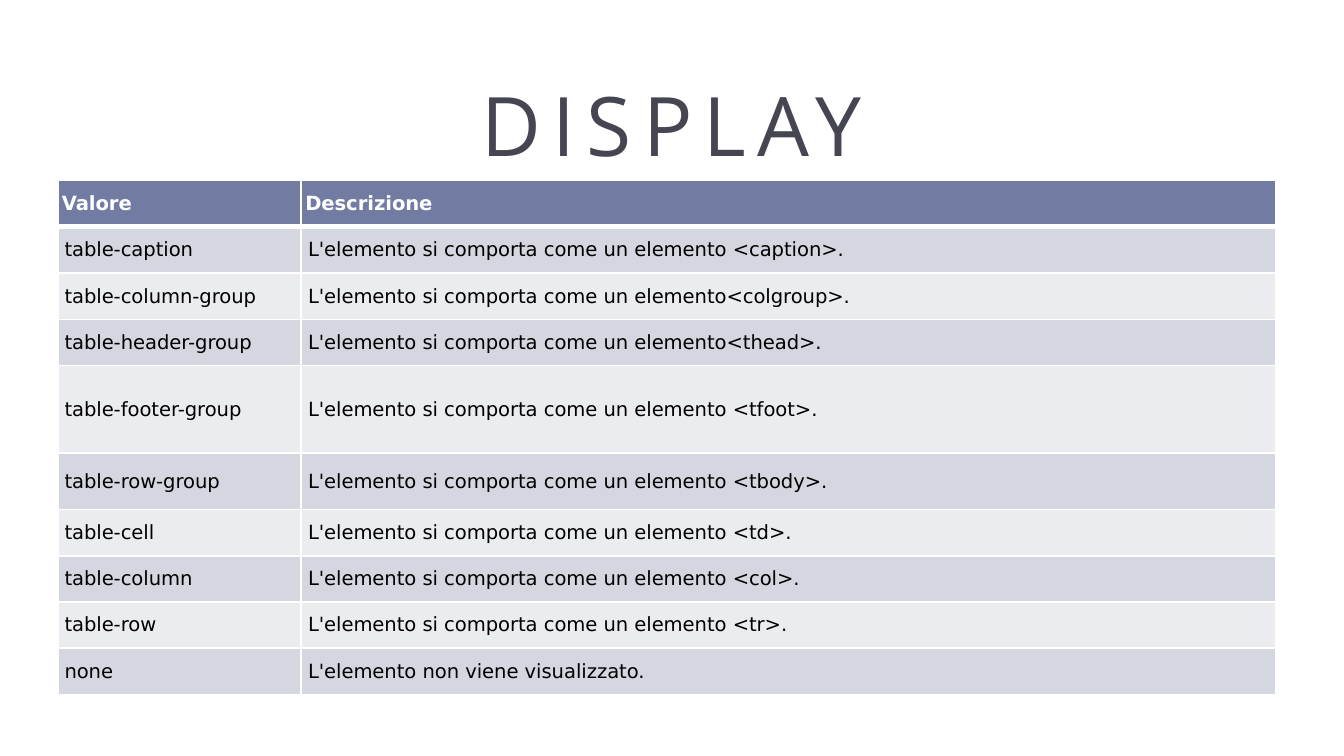
from pptx import Presentation
from pptx.dml.color import RGBColor
from pptx.enum.text import MSO_ANCHOR, PP_ALIGN
from pptx.oxml.ns import qn
from pptx.util import Inches, Pt
from lxml.etree import SubElement

W = Inches(10)
H = W * 9 // 16
ROW_SHARES = [0.09] * 4 + [0.17, 0.11] + [0.09] * 4
COL_SHARES = [0.2, 0.8]
BEHAVES = "L'elemento si comporta come un elemento"
ROWS = [
    ("Valore", "Descrizione"),
    ("table-caption", f"{BEHAVES} <caption>."),
    ("table-column-group", f"{BEHAVES}<colgroup>."),
    ("table-header-group", f"{BEHAVES}<thead>."),
    ("table-footer-group", f"{BEHAVES} <tfoot>."),
    ("table-row-group", f"{BEHAVES} <tbody>."),
    ("table-cell", f"{BEHAVES} <td>."),
    ("table-column", f"{BEHAVES} <col>."),
    ("table-row", f"{BEHAVES} <tr>."),
    ("none", "L'elemento non viene visualizzato."),
]


def color(value):
    return RGBColor.from_string(value)


def share_box(x, y, w, h):
    return int(x * W), int(y * H), int(w * W), int(h * H)


def style_run(r, name, size, hex_color, bold=False):
    r.font.name = name
    r.font.size = Pt(size)
    r.font.bold = bold
    r.font.color.rgb = color(hex_color)


def add_title(s, box, text):
    tf = s.shapes.add_textbox(*box).text_frame
    tf.word_wrap = True
    tf.vertical_anchor = MSO_ANCHOR.MIDDLE
    p = tf.paragraphs[0]
    p.text = text
    p.alignment = PP_ALIGN.CENTER
    r = p.runs[0]
    style_run(r, "Open Sans", 44, "464653")
    r.font._element.set("spc", "600")


def set_border(cell, side, hex_color, width):
    tc_pr = cell._tc.get_or_add_tcPr()
    ln = SubElement(tc_pr, qn(f"a:ln{side}"), w=str(Pt(width)))
    fill = SubElement(ln, qn("a:solidFill"))
    SubElement(fill, qn("a:srgbClr"), val=hex_color)


def style_cell(cell, row):
    header = row == 0
    cell.vertical_anchor = MSO_ANCHOR.MIDDLE
    cell.margin_left = cell.margin_right = Inches(0.03 if header else 0.05)
    cell.margin_top = cell.margin_bottom = Inches(0.03 if header else 0.07)
    widths = {"L": 1, "R": 1, "T": 3 if row == 1 else 1, "B": 3 if header else 1}
    for side, width in widths.items():
        set_border(cell, side, "FFFFFF", width)
    cell.fill.solid()
    band = "D5D7E0" if row % 2 else "EBECF0"
    cell.fill.fore_color.rgb = color("727CA3" if header else band)
    r = cell.text_frame.paragraphs[0].runs[0]
    style_run(r, "DejaVu Sans", 10.5, "FFFFFF" if header else "000000", header)


def add_values_table(s, box, rows):
    table = s.shapes.add_table(len(rows), len(rows[0]), *box).table
    for column, share in zip(table.columns, COL_SHARES):
        column.width = int(box[2] * share)
    for i, (values, share) in enumerate(zip(rows, ROW_SHARES)):
        table.rows[i].height = int(box[3] * share)
        for j, text in enumerate(values):
            cell = table.cell(i, j)
            cell.text_frame.text = text
            style_cell(cell, i)


def main():
    prs = Presentation()
    prs.slide_width, prs.slide_height = W, H
    s = prs.slides.add_slide(prs.slide_layouts[6])
    add_title(s, share_box(0.05, 0.08, 0.9, 0.166), "DISPLAY")
    add_values_table(s, share_box(0.043, 0.239, 0.906, 0.68), ROWS)
    prs.save("out.pptx")


if __name__ == "__main__":
    main()
